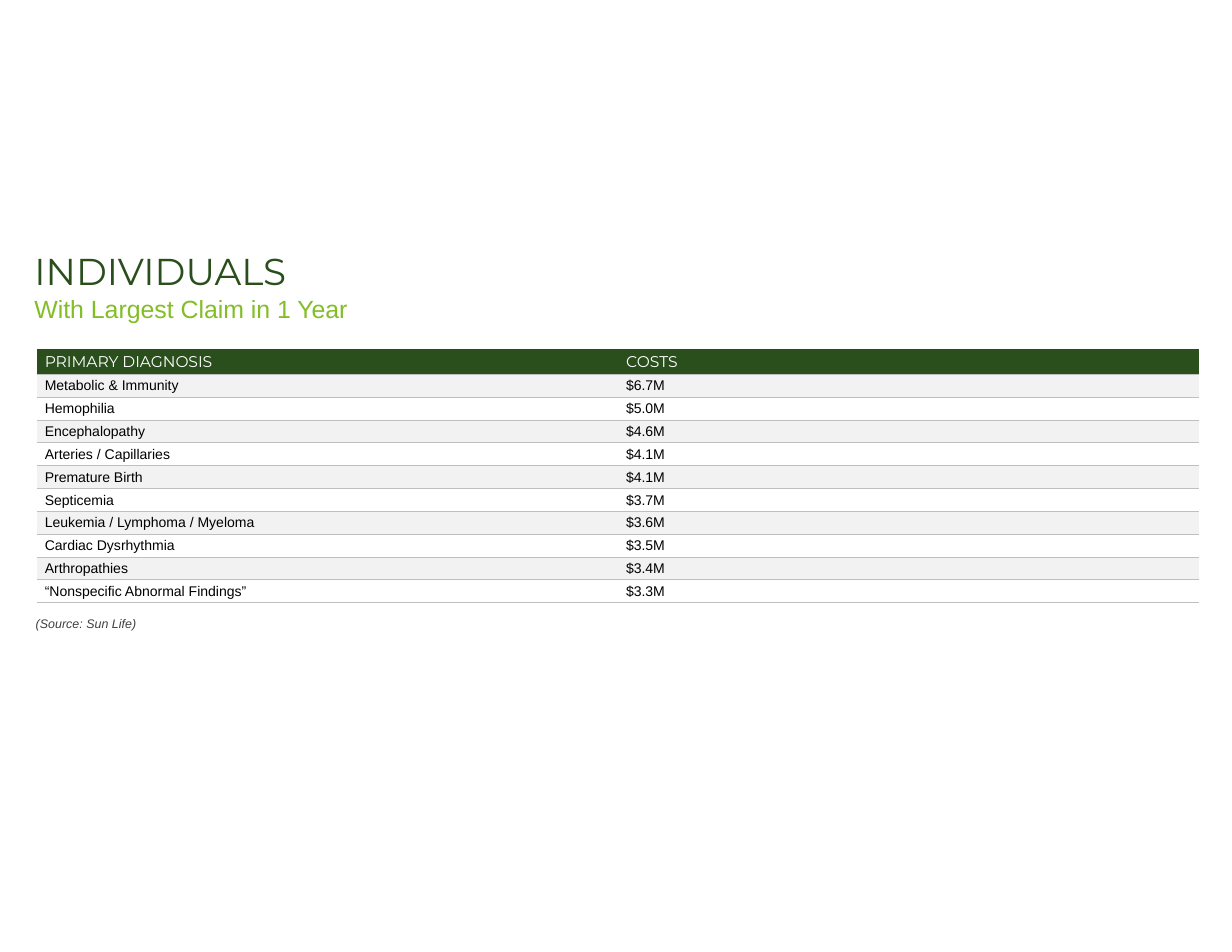
from lxml import etree
from pptx import Presentation
from pptx.dml import color
from pptx.enum import text
from pptx.oxml import ns
from pptx.util import Inches, Pt

DARK_GREEN, LIGHT_GREEN = "2A4F1D", "83BE26"
WHITE, STRIPE, RULE = "FFFFFF", "F2F2F2", "BFBFBF"
NO_STYLE_NO_GRID = "{2D5ABB26-0587-4C30-8999-92F81FD0307C}"

HEADER = ("PRIMARY DIAGNOSIS", "COSTS")
CLAIMS = [
    ("Metabolic & Immunity", "$6.7M"),
    ("Hemophilia", "$5.0M"),
    ("Encephalopathy", "$4.6M"),
    ("Arteries / Capillaries", "$4.1M"),
    ("Premature Birth", "$4.1M"),
    ("Septicemia", "$3.7M"),
    ("Leukemia / Lymphoma / Myeloma", "$3.6M"),
    ("Cardiac Dysrhythmia", "$3.5M"),
    ("Arthropathies", "$3.4M"),
    ("“Nonspecific Abnormal Findings”", "$3.3M"),
]


def rgb(hex_color):
    return color.RGBColor.from_string(hex_color)


def set_font(paragraph, name, size, hex_color, italic=None):
    font = paragraph.font
    font.name, font.size, font.italic = name, Pt(size), italic
    font.color.rgb = rgb(hex_color)


def add_lines(slide, box, lines):
    """Add a text box with one paragraph per (wording, font settings) pair."""
    frame = slide.shapes.add_textbox(*map(Inches, box)).text_frame
    frame.word_wrap = False
    frame.auto_size = text.MSO_AUTO_SIZE.SHAPE_TO_FIT_TEXT
    frame.text = "\n".join(wording for wording, _ in lines)
    for paragraph, (_, font) in zip(frame.paragraphs, lines):
        set_font(paragraph, *font)


def add_bottom_rule(cell):
    line = etree.Element(ns.qn("a:lnB"), w=str(Pt(0.25)))
    fill = etree.SubElement(line, ns.qn("a:solidFill"))
    etree.SubElement(fill, ns.qn("a:srgbClr"), val=RULE)
    cell._tc.get_or_add_tcPr().insert(0, line)


def fill_cell(cell, wording, hex_fill, font):
    cell.text = wording
    cell.vertical_anchor = text.MSO_ANCHOR.MIDDLE
    cell.margin_left = cell.margin_right = Inches(0.07)
    cell.margin_top = cell.margin_bottom = 0
    cell.fill.solid()
    cell.fill.fore_color.rgb = rgb(hex_fill)
    add_bottom_rule(cell)
    paragraph = cell.text_frame.paragraphs[0]
    paragraph.line_spacing = 1.07
    set_font(paragraph, *font)


def add_claims_table(slide, box, header_height=0.22):
    rows = [HEADER, *CLAIMS]
    table = slide.shapes.add_table(len(rows), len(HEADER), *map(Inches, box)).table
    table.horz_banding = False
    table._tbl.tblPr.find(ns.qn("a:tableStyleId")).text = NO_STYLE_NO_GRID
    claim_height = (box[3] - header_height) / len(CLAIMS)
    for index, values in enumerate(rows):
        if index == 0:
            height, fill, font = header_height, DARK_GREEN, ("Montserrat", 10, WHITE)
        else:
            height, font = claim_height, ("Arial", 9, "000000")
            fill = STRIPE if index % 2 else WHITE
        table.rows[index].height = Inches(height)
        for column, value in enumerate(values):
            fill_cell(table.cell(index, column), value, fill, font)


def main():
    presentation = Presentation()
    presentation.slide_width, presentation.slide_height = Inches(11), Inches(8.5)
    slide = presentation.slides.add_slide(presentation.slide_layouts[6])
    add_lines(slide, (0.21, 2.17, 3.03, 0.77), [
        ("INDIVIDUALS", ("Montserrat", 24, DARK_GREEN)),
        ("With Largest Claim in 1 Year", ("Arial", 16, LIGHT_GREEN)),
    ])
    add_claims_table(slide, (0.33, 3.12, 10.38, 2.26))
    add_lines(slide, (0.22, 5.45, 1.11, 0.24), [
        ("(Source: Sun Life)", ("Arial", 8, "404040", True)),
    ])
    presentation.save("out.pptx")


if __name__ == "__main__":
    main()
